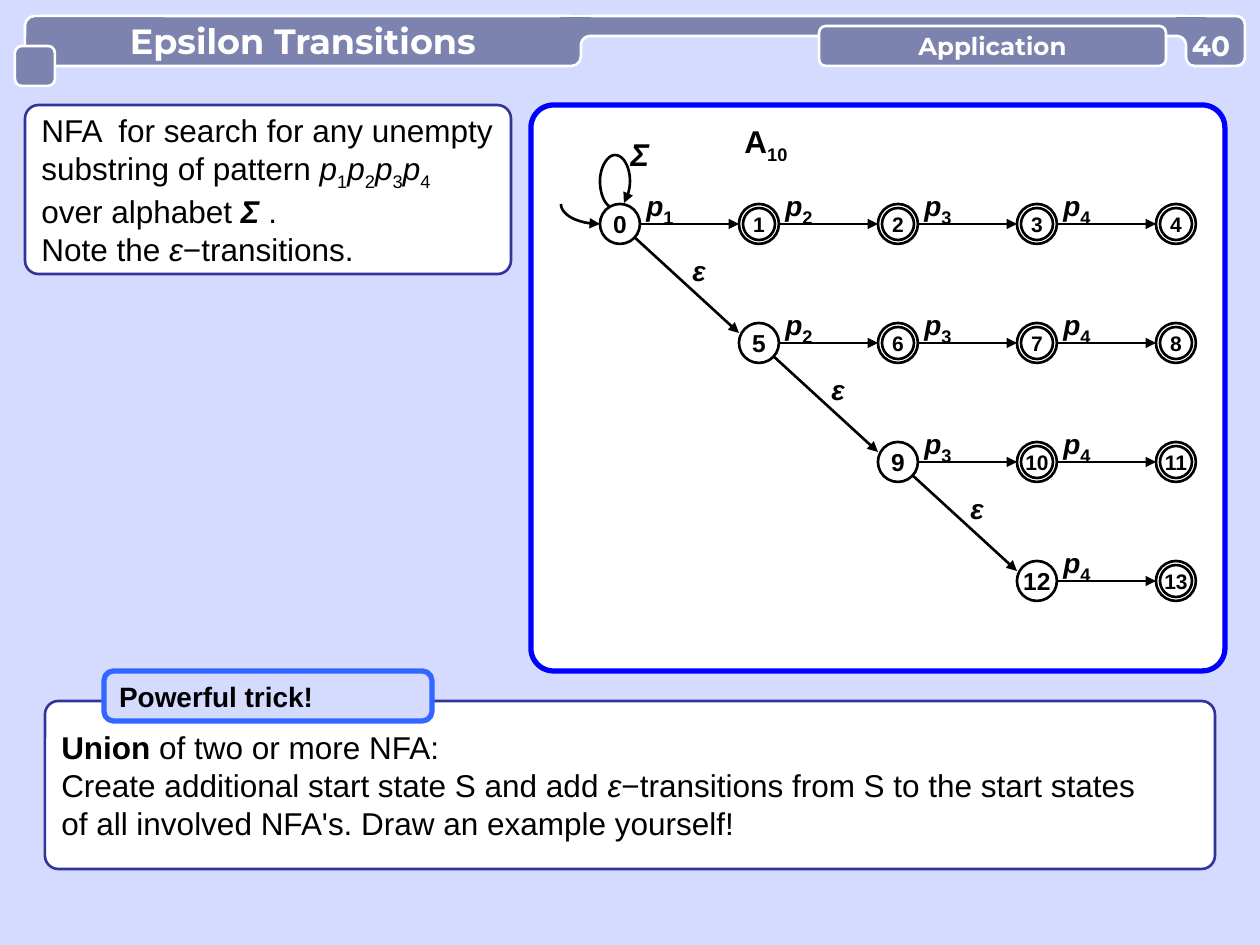
import pptx
import pptx.dml.color
import pptx.enum.shapes
import pptx.enum.text
import pptx.oxml
import pptx.oxml.ns
import pptx.util

SCALE = 914400 / 126
SHAPES = pptx.enum.shapes.MSO_SHAPE
ALIGN = pptx.enum.text.PP_ALIGN
ANCHOR = pptx.enum.text.MSO_ANCHOR

BACKGROUND, BAR, WHITE, BLACK, NAVY = "D5DAFF", "7D83AF", "FFFFFF", "000000", "333399"

# A line of text is a list of (text, marks): b bold, i italic, s subscript.
TASK = [
    [("NFA  for search for any unempty", "")],
    [("substring of pattern ", "")] + [run for n in "1234" for run in (("p", "i"), (n, "s"))],
    [("over alphabet ", ""), ("Σ ", "bi"), (".", "")],
    [("Note the ", ""), ("ε", "i"), ("−transitions.", "")],
]
TRICK = [
    [("Union", "b"), (" of two or more NFA:", "")],
    [("Create additional start state S and add ", ""), ("ε", "i"),
     ("−transitions from S to the start states", "")],
    [("of all involved NFA's. Draw an example yourself!", "")],
]

# Each row starts one column further right; all states but the first accept.
STATE_ROWS = [[0, 1, 2, 3, 4], [5, 6, 7, 8], [9, 10, 11], [12, 13]]
ORIGIN_X, ORIGIN_Y, COLUMN_STEP, ROW_STEP = 620, 224, 139, 119
RADIUS, INNER_RADIUS, LABEL = 20, 16, 40

LOOP = [(615, 209), (607, 208), (600, 197), (600, 181), (600, 168), (607, 155), (615, 155),
        (624, 155), (630, 168), (630, 181), (630, 190), (627, 198), (624, 203)]
START = [(561, 204), (561, 215), (578, 224), (600, 224)]

# Bar corners: left of the patch, curve, point that closes the notch.
NOTCHES = [
    (561, [(591, 36), (585, 36), (581, 40), (581, 46)], (591, 46)),
    (1176, [(1176, 36), (1182, 36), (1186, 40), (1186, 46)], (1176, 46)),
]


def px(value):
    return round(value * SCALE)


def color(value):
    return pptx.dml.color.RGBColor.from_string(value)


def set_values(target, values):
    for name, value in values.items():
        setattr(target, name, value)


def paint(shape, fill=None, line=None, width=1.5):
    shape.shadow.inherit = False
    if fill:
        shape.fill.solid()
        shape.fill.fore_color.rgb = color(fill)
    else:
        shape.fill.background()
    if line:
        shape.line.color.rgb = color(line)
        shape.line.width = pptx.util.Pt(width)
    else:
        shape.line.fill.background()


def write(shape, lines, size, ink=BLACK, font="Arial", align=ALIGN.CENTER,
          anchor=ANCHOR.MIDDLE, wrap=False, inset=None, subscript_size=None):
    frame = shape.text_frame
    set_values(frame, {"word_wrap": wrap, "vertical_anchor": anchor})
    if inset is not None:
        sides = ("left", "top", "right", "bottom")
        set_values(frame, {f"margin_{side}": px(inset) for side in sides})
    for index, line in enumerate(lines):
        paragraph = frame.add_paragraph() if index else frame.paragraphs[0]
        paragraph.alignment = align
        for text, marks in line:
            run = paragraph.add_run()
            run.text = text
            is_subscript = "s" in marks
            points = subscript_size if is_subscript and subscript_size else size
            set_values(run.font, {"name": font, "size": pptx.util.Pt(points),
                                  "bold": "b" in marks, "italic": "i" in marks})
            run.font.color.rgb = color(ink)
            if is_subscript:
                run._r.get_or_add_rPr().set("baseline", "-25000")


def add_box(slide, kind, left, top, width, height, fill=None, line=None, weight=1.5, corner=None):
    shape = slide.shapes.add_shape(kind, px(left), px(top), px(width), px(height))
    paint(shape, fill, line, weight)
    if corner is not None:
        shape.adjustments[0] = corner
    return shape


def add_panel(slide, rectangle, fill, line, corner, weight=1.5):
    return add_box(slide, SHAPES.ROUNDED_RECTANGLE, *rectangle, fill, line, weight, corner)


def add_circle(slide, x, y, radius):
    return add_box(slide, SHAPES.OVAL, x - radius, y - radius, 2 * radius, 2 * radius, WHITE, BLACK)


def add_label(slide, left, top, line, size, fill=None):
    shape = add_box(slide, SHAPES.RECTANGLE, left, top, LABEL, LABEL, fill)
    write(shape, [line], size, anchor=ANCHOR.TOP, wrap=True, inset=0, subscript_size=18)


def add_arrowhead(shape):
    line = shape.line._get_or_add_ln()
    line.append(pptx.oxml.parse_xml(
        f'<a:tailEnd {pptx.oxml.ns.nsdecls("a")} type="triangle"/>'))


def add_line(slide, begin, end, ink, arrow=False):
    ends = [px(value) for value in (*begin, *end)]
    connector = slide.shapes.add_connector(pptx.enum.shapes.MSO_CONNECTOR.STRAIGHT, *ends)
    connector.line.color.rgb = color(ink)
    connector.line.width = pptx.util.Pt(1.5)
    if arrow:
        add_arrowhead(connector)
    connector._element.spPr.append(pptx.oxml.parse_xml(
        f'<a:effectLst {pptx.oxml.ns.nsdecls("a")}/>'))


def curve_points(controls, steps=12):
    """Points along joined cubic curves that share their end points."""
    points = [controls[0]]
    for first in range(0, len(controls) - 1, 3):
        part = controls[first:first + 4]
        for step in range(1, steps + 1):
            t = step / steps
            weights = ((1 - t) ** 3, 3 * t * (1 - t) ** 2, 3 * t * t * (1 - t), t ** 3)
            points.append(tuple(sum(w * p[axis] for w, p in zip(weights, part))
                                for axis in (0, 1)))
    return points


def add_outline(slide, points, fill=None, line=None, close=False):
    corners = [(px(x), px(y)) for x, y in points]
    builder = slide.shapes.build_freeform(*corners[0], scale=1.0)
    builder.add_line_segments(corners[1:], close=close)
    shape = builder.convert_to_shape()
    paint(shape, fill, line)
    return shape


def add_automaton(slide):
    add_label(slide, 620, 135, [("Σ", "bi")], 18, WHITE)
    add_arrowhead(add_outline(slide, curve_points(LOOP), line=BLACK))
    add_arrowhead(add_outline(slide, curve_points(START), line=BLACK))
    for row, states in enumerate(STATE_ROWS):
        y = ORIGIN_Y + row * ROW_STEP
        centers = [ORIGIN_X + (row + index) * COLUMN_STEP for index in range(len(states))]
        for index, x in enumerate(centers[:-1]):
            symbol = [("p", "bi"), (str(row + index + 1), "bs")]
            add_label(slide, x + RADIUS, y - 39, symbol, 16, WHITE)
            add_line(slide, (x + RADIUS, y), (x + COLUMN_STEP - RADIUS, y), BLACK, arrow=True)
        if row < len(STATE_ROWS) - 1:
            x = centers[0]
            add_line(slide, (x, y), (x + COLUMN_STEP - RADIUS, y + ROW_STEP - 10),
                     BLACK, arrow=True)
            add_label(slide, x + 59, y + 30, [("ε", "bi")], 16)
        for index, (state, x) in enumerate(zip(states, centers)):
            circle = add_circle(slide, x, y, RADIUS)
            if index:
                circle = add_circle(slide, x, y, INNER_RADIUS)
            write(circle, [[(str(state), "b")]], 12 if index else 14)


def add_header(slide):
    heading = {"ink": WHITE, "font": "Montserrat"}
    title = add_panel(slide, (25, 16, 556, 50), BAR, WHITE, 0.19)
    write(title, [[("Epsilon Transitions", "b")]], 20, **heading)
    add_panel(slide, (581, 16, 615, 20), BAR, WHITE, 0.5)
    add_panel(slide, (15, 46, 40, 40), BAR, WHITE, 0.17)
    number = add_panel(slide, (1186, 16, 59, 50), BAR, WHITE, 0.17)
    for left, controls, corner in NOTCHES:
        add_box(slide, SHAPES.RECTANGLE, left, 16, 30, 30, BAR)
        add_line(slide, (left, 16), (left + 30, 16), WHITE)
        curve = curve_points(controls)
        add_outline(slide, curve + [corner], fill=BACKGROUND, close=True)
        add_outline(slide, curve, line=WHITE)
    topic = add_panel(slide, (819, 26, 347, 40), BAR, WHITE, 0.17)
    write(topic, [[("Application", "b")]], 14, **heading)
    number = slide.shapes.add_textbox(px(1186), px(28), px(50), px(34))
    write(number, [[("40", "b")]], 16, wrap=True, inset=0, **heading)


def main():
    presentation = pptx.Presentation()
    set_values(presentation, {"slide_width": px(1260), "slide_height": px(945)})
    slide = presentation.slides.add_slide(presentation.slide_layouts[6])
    slide.background.fill.solid()
    slide.background.fill.fore_color.rgb = color(BACKGROUND)

    task = add_panel(slide, (25, 105, 486, 169), WHITE, NAVY, 0.08)
    write(task, TASK, 18, align=ALIGN.LEFT)
    add_panel(slide, (531, 105, 694, 566), WHITE, "0000FF", 0.04, 3)
    add_automaton(slide)
    name = slide.shapes.add_textbox(px(730), px(116), px(72), px(50))
    write(name, [[("A", "b"), ("10", "bs")]], 18, anchor=ANCHOR.TOP)
    add_header(slide)
    trick = add_panel(slide, (45, 701, 1170, 168), WHITE, NAVY, 0.08)
    write(trick, TRICK, 18, align=ALIGN.LEFT)
    caption = add_panel(slide, (104, 671, 328, 50), BACKGROUND, "3366FF", 0.19, 3)
    write(caption, [[("Powerful trick!", "b")]], 16, align=ALIGN.LEFT)
    presentation.save("out.pptx")


if __name__ == "__main__":
    main()
